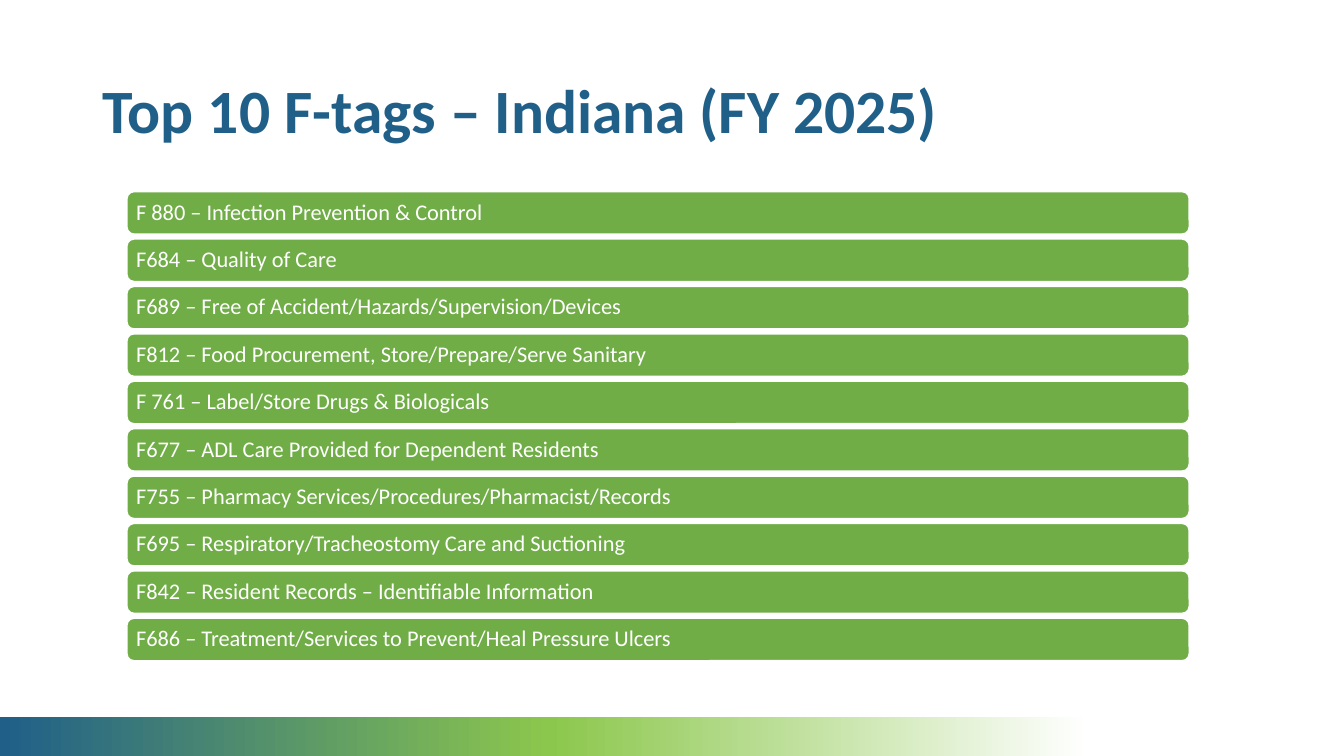
"""Build the slide listing the ten most cited F-tags in Indiana."""
from copy import deepcopy

from pptx import Presentation
from pptx.dml.color import RGBColor as RGB
from pptx.enum.shapes import MSO_SHAPE as SHAPE
from pptx.enum.text import MSO_ANCHOR as ANCHOR, PP_ALIGN as ALIGN
from pptx.oxml.ns import qn
from pptx.util import Cm, Pt

COLORS = {"blue": "205F88", "lime": "8CC74D", "green": "70AD47", "white": "FFFFFF"}
TITLE_FONT = {"name": "Calibri", "size": Pt(44), "bold": True}
TAG_FONT = {"name": "Calibri", "size": Pt(16), "bold": False}
BAND_STOPS = [("blue", 0), ("lime", 0.41), ("white", 0.81)]
TAGS = [
    "F 880 – Infection Prevention & Control",
    "F684 – Quality of Care",
    "F689 – Free of Accident/Hazards/Supervision/Devices",
    "F812 – Food Procurement, Store/Prepare/Serve Sanitary",
    "F 761 – Label/Store Drugs & Biologicals",
    "F677 – ADL Care Provided for Dependent Residents",
    "F755 – Pharmacy Services/Procedures/Pharmacist/Records",
    "F695 – Respiratory/Tracheostomy Care and Suctioning",
    "F842 – Resident Records – Identifiable Information",
    "F686 – Treatment/Services to Prevent/Heal Pressure Ulcers",
]
TAG_TOP, TAG_SPAN = 4.83, 10.75


def color(name):
    return RGB.from_string(COLORS[name])


def write(sp, text, font, color_name, inset=None):
    tf = sp.text_frame
    frame = {"word_wrap": True, "vertical_anchor": ANCHOR.MIDDLE}
    if inset is not None:
        frame.update(margin_left=inset, margin_right=inset, margin_top=inset, margin_bottom=inset)
    for key, value in frame.items():
        setattr(tf, key, value)
    p = tf.paragraphs[0]
    p.alignment, p.line_spacing = ALIGN.LEFT, 0.9
    r = p.add_run()
    r.text = text
    for key, value in font.items():
        setattr(r.font, key, value)
    r.font.color.rgb = color(color_name)


def add_band(s, left, top, width, height):
    sp = s.shapes.add_shape(SHAPE.RECTANGLE, Cm(left), Cm(top), Cm(width), Cm(height))
    sp.shadow.inherit = False
    sp.line.fill.background()
    sp.fill.gradient()
    sp.fill.gradient_angle = 0
    stops = sp._element.spPr.find(qn("a:gradFill")).find(qn("a:gsLst"))
    stops.append(deepcopy(stops[0]))
    for stop, (name, position) in zip(sp.fill.gradient_stops, BAND_STOPS):
        stop.color.rgb = color(name)
        stop.position = position


def add_title(s, text, left, top, width, height):
    sp = s.shapes.add_textbox(Cm(left), Cm(top), Cm(width), Cm(height))
    write(sp, text, TITLE_FONT, "blue")


def add_tag(s, text, left, top, width, height):
    sp = s.shapes.add_shape(SHAPE.ROUNDED_RECTANGLE, Cm(left), Cm(top), Cm(width), Cm(height))
    sp.shadow.inherit = False
    sp.fill.solid()
    sp.fill.fore_color.rgb = color("green")
    sp.line.color.rgb = color("white")
    sp.line.width = Pt(1)
    write(sp, text, TAG_FONT, "white", Cm(0.18))


def main():
    prs = Presentation()
    prs.slide_width, prs.slide_height = Cm(33.87), Cm(19.05)
    s = prs.slides.add_slide(prs.slide_layouts[6])
    add_band(s, 0, 18.07, 33.87, 0.98)
    add_title(s, "Top 10 F-tags – Indiana (FY 2025)", 2.34, 1.02, 29.21, 3.68)
    pitch = TAG_SPAN / (len(TAGS) - 1)
    for i, tag in enumerate(TAGS):
        add_tag(s, tag, 3.2, TAG_TOP + i * pitch, 26.77, 1.07)
    prs.save("out.pptx")


if __name__ == "__main__":
    main()
